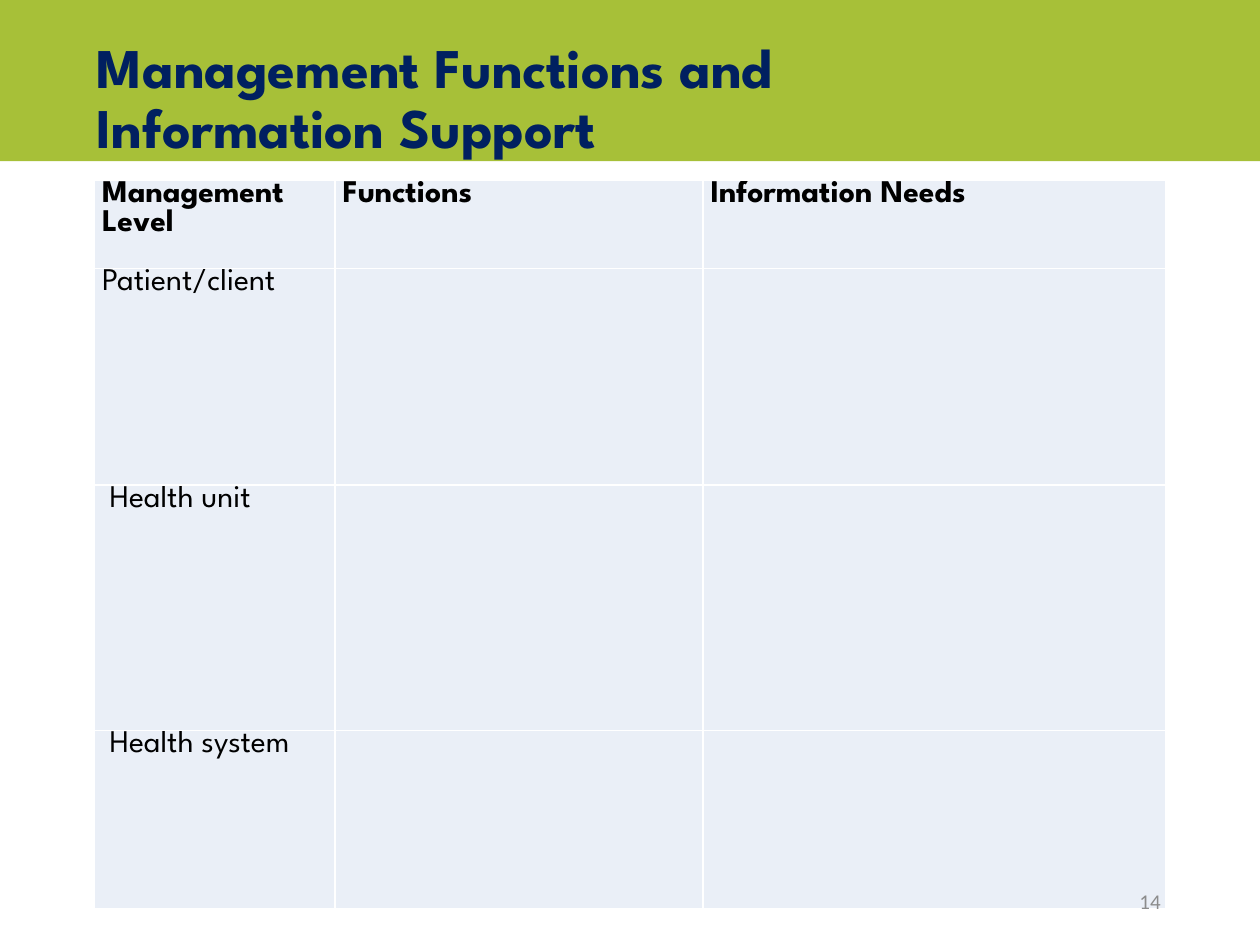
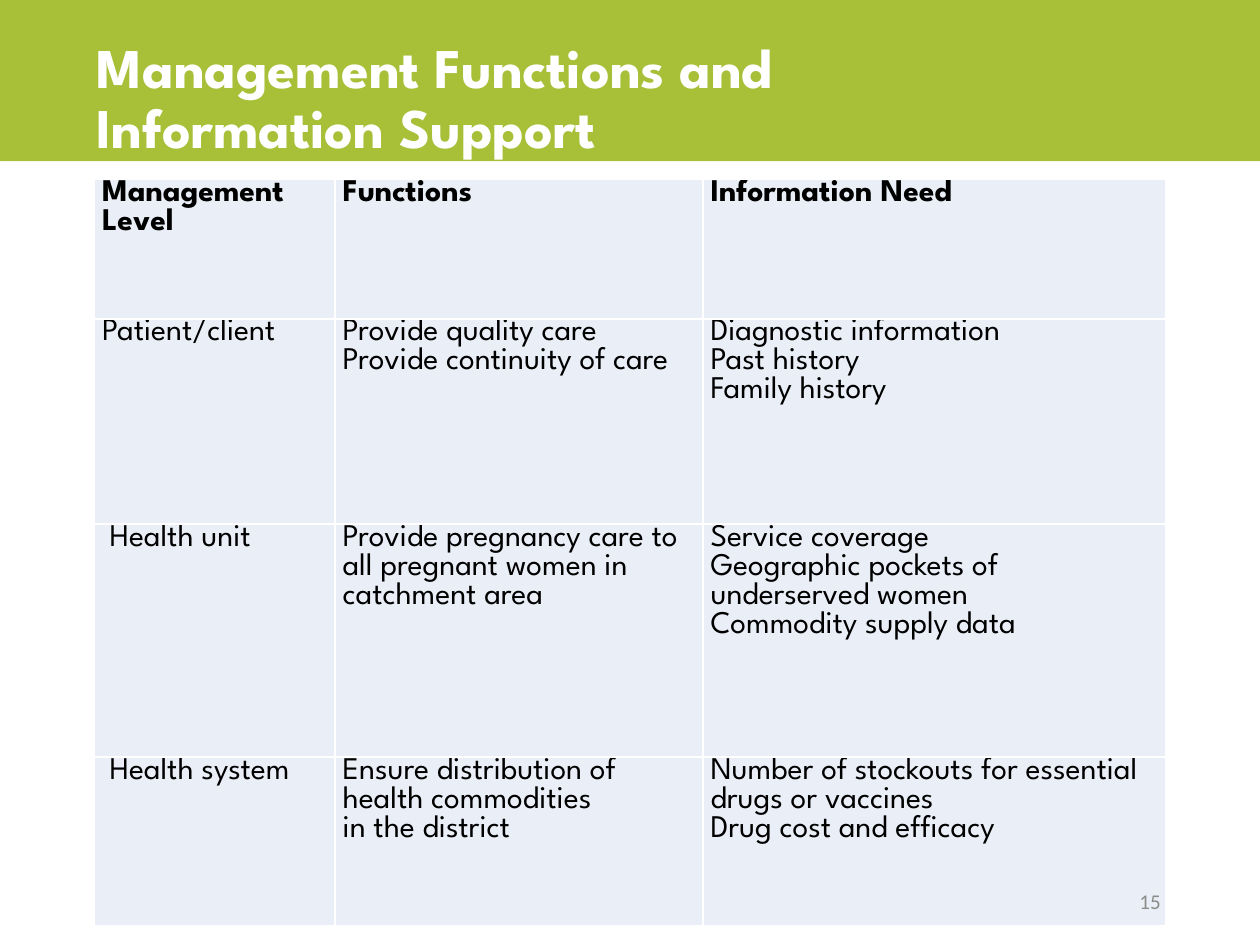
"""Build two slides on management functions and the information that supports them."""
from dataclasses import dataclass

from lxml.etree import SubElement
from pptx import Presentation
from pptx.dml.color import RGBColor
from pptx.enum.shapes import MSO_SHAPE
from pptx.enum.text import MSO_ANCHOR, PP_ALIGN
from pptx.oxml import parse_xml
from pptx.oxml.ns import nsdecls, qn
from pptx.util import Inches, Pt


@dataclass(frozen=True)
class Theme:
    band: str = "A7C038"
    navy: str = "002060"
    white: str = "FFFFFF"
    cell: str = "EAEFF7"
    ink: str = "000000"
    number: str = "8C8C8C"
    font: str = "League Spartan"
    number_font: str = "Calibri"
    title_size: int = 32
    table_size: int = 18
    number_size: int = 12
    border: int = 1


THEME = Theme()
SLIDE_SIZE = (10, 7.5)
TITLE = ["Management Functions and ", "Information Support"]
LEVELS = [("Patient/client", 0), ("Health unit", 0.06), ("Health system", 0.06)]
COLUMN_WIDTHS = [1.91, 2.92, 3.67]
TABLE_LEFT = 0.75
CELL_MARGIN = 0.06

SLIDES = [
    {
        "number": "14",
        "title_color": THEME.navy,
        "header": ["Management Level", "Functions", "Information Needs"],
        "answers": [([], []), ([], []), ([], [])],
        "top": 1.43,
        "row_heights": [0.7, 1.72, 1.95, 1.41],
    },
    {
        "number": "15",
        "title_color": THEME.white,
        "header": ["Management Level", "Functions", "Information Need"],
        "answers": [
            (["Provide quality care", "Provide continuity of care"],
             ["Diagnostic information", "Past history", "Family history"]),
            (["Provide pregnancy care to all pregnant women in catchment area"],
             ["Service coverage", "Geographic pockets of underserved women",
              "Commodity supply data"]),
            (["Ensure distribution of health commodities", "in the district"],
             ["Number of stockouts for essential drugs or vaccines",
              "Drug cost and efficacy"]),
        ],
        "top": 1.42,
        "row_heights": [1.11, 1.63, 1.85, 1.34],
    },
]


def add_run(paragraph, words, size, color, font=THEME.font, bold=False):
    run = paragraph.add_run()
    run.text = words
    run.font.size = Pt(size)
    run.font.name = font
    run.font.bold = bold
    run.font.color.rgb = RGBColor.from_string(color)


def add_text_box(slide, left, top, width, height):
    frame = slide.shapes.add_textbox(*map(Inches, (left, top, width, height))).text_frame
    frame.word_wrap = True
    frame.vertical_anchor = MSO_ANCHOR.MIDDLE
    return frame.paragraphs[0]


def add_band(slide):
    band = slide.shapes.add_shape(
        MSO_SHAPE.RECTANGLE, 0, 0, Inches(SLIDE_SIZE[0]), Inches(1.28))
    band.shadow.inherit = False
    band.fill.solid()
    band.fill.fore_color.rgb = RGBColor.from_string(THEME.band)
    band.line.fill.background()


def add_title(slide, color):
    heading = add_text_box(slide, 0.67, 0.17, 9.17, 1.25)
    heading.line_spacing = 0.9
    for position, line in enumerate(TITLE):
        if position:
            heading.add_line_break()
        add_run(heading, line, THEME.title_size, color, bold=True)


def add_page_number(slide, number):
    footer = add_text_box(slide, 7.06, 6.95, 2.25, 0.4)
    footer.alignment = PP_ALIGN.RIGHT
    add_run(footer, number, THEME.number_size, THEME.number, THEME.number_font)


def style_cell(cell):
    cell.margin_left = cell.margin_right = Inches(CELL_MARGIN)
    cell.margin_top = cell.margin_bottom = 0
    cell.fill.solid()
    cell.fill.fore_color.rgb = RGBColor.from_string(THEME.cell)
    properties = cell._tc.get_or_add_tcPr()
    for position, side in enumerate(("lnL", "lnR", "lnT", "lnB")):
        edge = parse_xml(f'<a:{side} {nsdecls("a")} w="{Pt(THEME.border)}"/>')
        paint = SubElement(edge, qn("a:solidFill"))
        SubElement(paint, qn("a:srgbClr"), val=THEME.white)
        properties.insert(position, edge)


def fill_cell(cell, lines, bold, indent):
    style_cell(cell)
    for position, line in enumerate(lines):
        frame = cell.text_frame
        paragraph = frame.add_paragraph() if position else frame.paragraphs[0]
        if indent:
            paragraph._p.get_or_add_pPr().set("marL", str(Inches(indent)))
        add_run(paragraph, line, THEME.table_size, THEME.ink, bold=bold)


def add_support_table(slide, content):
    heights = content["row_heights"]
    table = slide.shapes.add_table(
        len(heights), len(COLUMN_WIDTHS), Inches(TABLE_LEFT), Inches(content["top"]),
        Inches(sum(COLUMN_WIDTHS)), Inches(sum(heights))).table
    table.first_row = table.horz_banding = False
    for column, width in zip(table.columns, COLUMN_WIDTHS):
        column.width = Inches(width)
    for row, height in zip(table.rows, heights):
        row.height = Inches(height)

    for cell, heading in zip(table.rows[0].cells, content["header"]):
        fill_cell(cell, [heading], True, 0)
    for row_index, ((level, indent), answers) in enumerate(
            zip(LEVELS, content["answers"]), start=1):
        level_cell, *answer_cells = table.rows[row_index].cells
        fill_cell(level_cell, [level], False, indent)
        for cell, lines in zip(answer_cells, answers):
            fill_cell(cell, lines, False, 0)


def main():
    deck = Presentation()
    deck.slide_width, deck.slide_height = map(Inches, SLIDE_SIZE)
    for content in SLIDES:
        slide = deck.slides.add_slide(deck.slide_layouts[6])
        add_band(slide)
        add_title(slide, content["title_color"])
        add_support_table(slide, content)
        add_page_number(slide, content["number"])
    deck.save("out.pptx")


if __name__ == "__main__":
    main()
